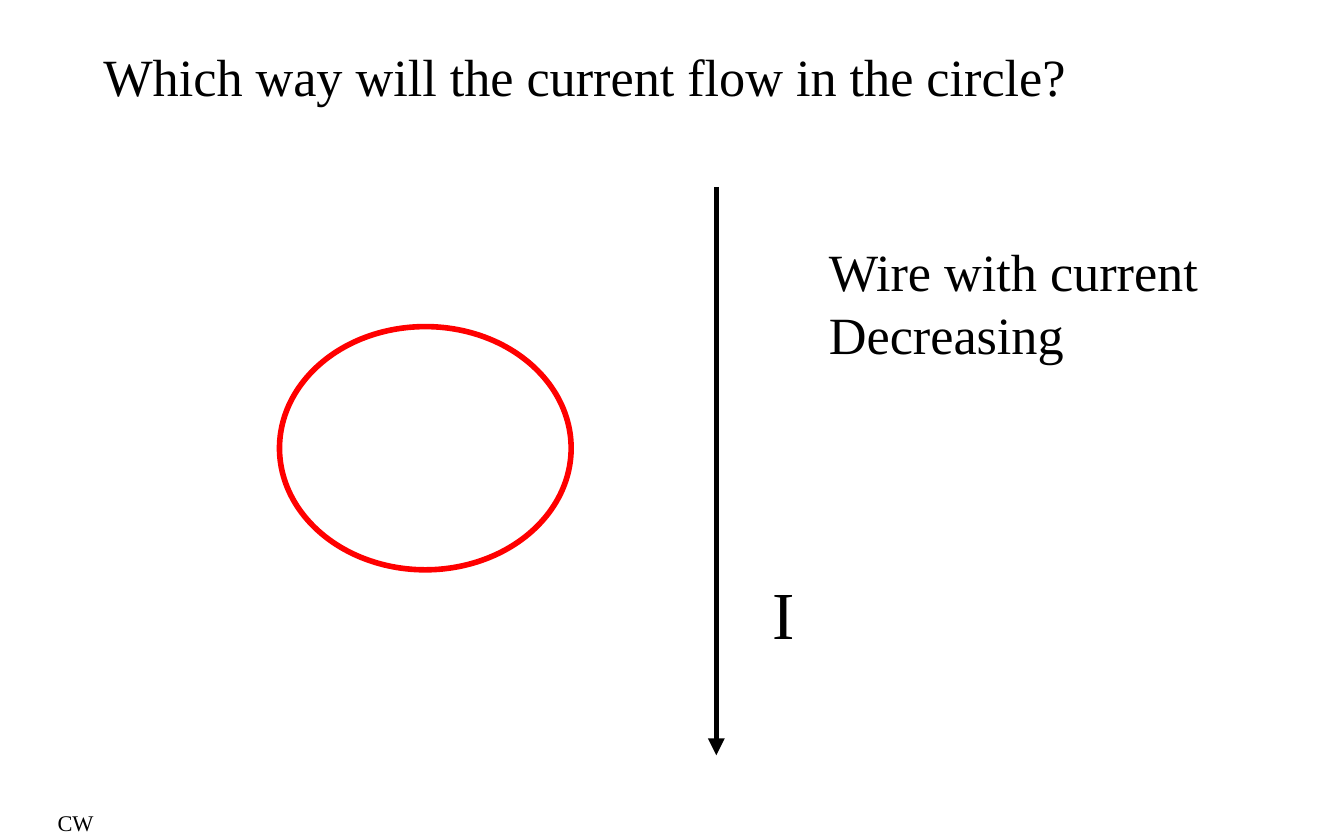
import pptx
import pptx.util
import pptx.dml.color
import pptx.enum.shapes
import pptx.enum.text
import pptx.oxml.ns
from lxml import etree
from pptx.util import Inches

COLORS = {"ink": "000000", "loop": "FF0000"}
FONT = "Times New Roman"
LINE_WIDTH = 3


def rgb(name):
    return pptx.dml.color.RGBColor.from_string(COLORS[name])


def write_text(shape, text, size=28, color="ink", wrap=True):
    frame = shape.text_frame
    frame.word_wrap = wrap
    frame.auto_size = pptx.enum.text.MSO_AUTO_SIZE.SHAPE_TO_FIT_TEXT
    frame.vertical_anchor = pptx.enum.text.MSO_ANCHOR.TOP
    paragraph = frame.paragraphs[0]
    paragraph.alignment = pptx.enum.text.PP_ALIGN.LEFT
    run = paragraph.add_run()
    run.text = text
    run.font.name = FONT
    run.font.size = pptx.util.Pt(size)
    run.font.color.rgb = rgb(color)


def add_title(slide, text, left, top, width, height):
    title = slide.shapes.title
    title.left, title.top = Inches(left), Inches(top)
    title.width, title.height = Inches(width), Inches(height)
    write_text(title, text)


def add_label(slide, text, left, top, width, height, **text_format):
    label = slide.shapes.add_textbox(
        Inches(left), Inches(top), Inches(width), Inches(height))
    write_text(label, text, **text_format)


def style_line(line, color):
    line.color.rgb = rgb(color)
    line.width = pptx.util.Pt(LINE_WIDTH)


def add_loop(slide, left, top, width, height):
    loop = slide.shapes.add_shape(
        pptx.enum.shapes.MSO_SHAPE.OVAL,
        Inches(left), Inches(top), Inches(width), Inches(height))
    loop.shadow.inherit = False
    loop.fill.background()
    style_line(loop.line, "loop")


def add_wire(slide, x, top, bottom):
    wire = slide.shapes.add_connector(
        pptx.enum.shapes.MSO_CONNECTOR.STRAIGHT,
        Inches(x), Inches(top), Inches(x), Inches(bottom))
    style_line(wire.line, "ink")
    qn = pptx.oxml.ns.qn
    properties = wire.element.spPr
    etree.SubElement(properties.find(qn("a:ln")), qn("a:tailEnd"), type="triangle")
    etree.SubElement(properties, qn("a:effectLst"))


def main():
    presentation = pptx.Presentation()
    presentation.slide_width = Inches(10)
    presentation.slide_height = Inches(6.25)
    slide = presentation.slides.add_slide(presentation.slide_layouts[5])

    add_title(slide, "Which way will the current flow in the circle?",
              0.67, 0.28, 8.75, 0.57)
    add_label(slide, "CW", 0.33, 5.97, 0.47, 0.3, size=12, wrap=False)
    add_loop(slide, 2.08, 2.43, 2.17, 1.81)
    add_wire(slide, 5.33, 1.39, 5.62)
    add_label(slide, "Wire with current Decreasing", 6.07, 1.73, 3.1, 1.04)
    add_label(slide, "I", 5.65, 4.21, 0.37, 0.71, size=36, wrap=False)

    presentation.save("out.pptx")


if __name__ == "__main__":
    main()
